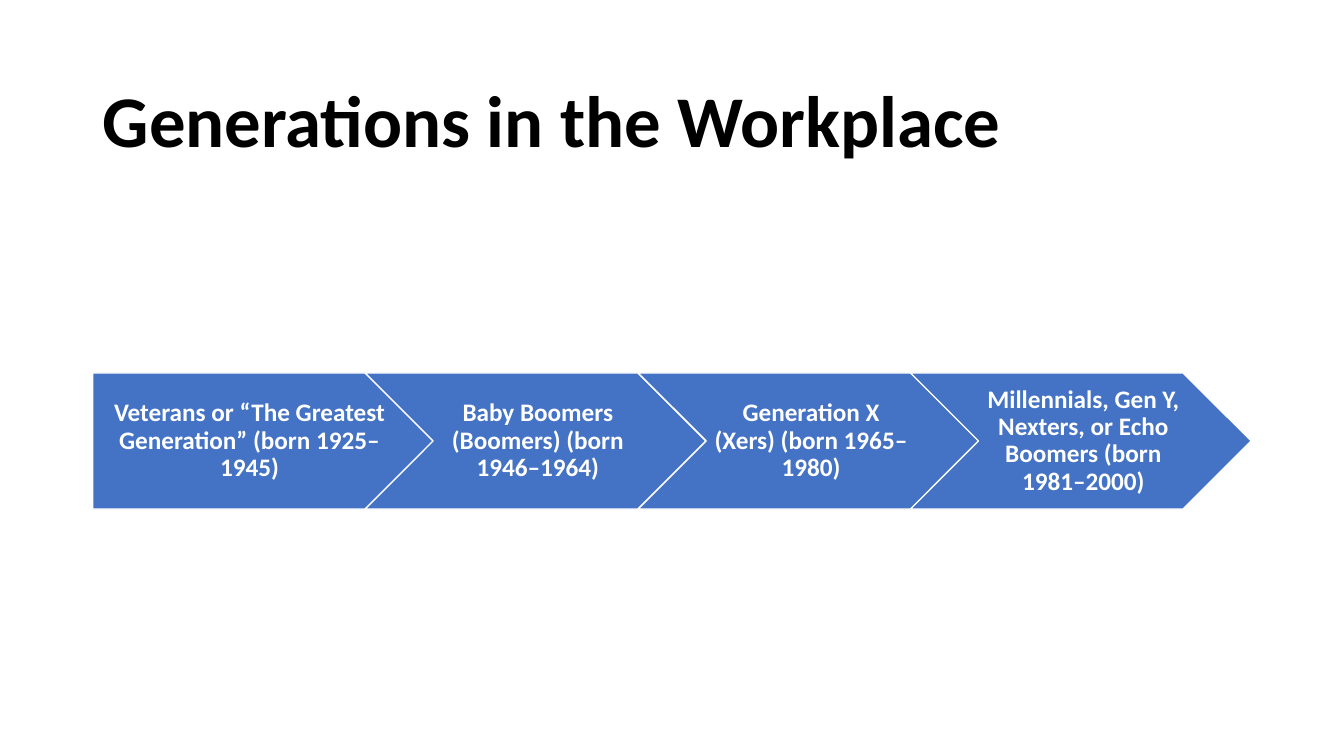
import dataclasses

import pptx
import pptx.dml.color
import pptx.enum.shapes
import pptx.enum.text
import pptx.slide
import pptx.text.text
import pptx.util

PX = 9144  # EMU per px, 100 px to the inch
FONT = "Calibri"
BLACK = pptx.dml.color.RGBColor(0x00, 0x00, 0x00)
WHITE = pptx.dml.color.RGBColor(0xFF, 0xFF, 0xFF)
BLUE = pptx.dml.color.RGBColor(0x44, 0x72, 0xC4)

STRIP_LEFT, STRIP_TOP, STRIP_WIDTH = 92, 370, 1149
ARROW_WIDTH, ARROW_HEIGHT = 338, 135

PENTAGON = pptx.enum.shapes.MSO_SHAPE.PENTAGON
CHEVRON = pptx.enum.shapes.MSO_SHAPE.CHEVRON


@dataclasses.dataclass(frozen=True)
class Generation:
    text: str
    outline: pptx.enum.shapes.MSO_SHAPE = CHEVRON
    left_inset: int = 8


GENERATIONS = [
    Generation("Veterans or “The Greatest Generation” (born 1925–1945)", PENTAGON, 10),
    Generation("Baby Boomers (Boomers) (born 1946–1964)"),
    Generation("Generation X (Xers) (born 1965–1980)"),
    Generation("Millennials, Gen Y, Nexters, or Echo Boomers (born 1981–2000)"),
]


def px(length: int) -> pptx.util.Emu:
    return pptx.util.Emu(length * PX)


def write_text(
    tf: pptx.text.text.TextFrame,
    text: str,
    size: int,
    color: pptx.dml.color.RGBColor,
    align: pptx.enum.text.PP_ALIGN,
) -> None:
    """Fill the frame with one bold, vertically centred paragraph."""
    tf.word_wrap = True
    tf.vertical_anchor = pptx.enum.text.MSO_ANCHOR.MIDDLE
    p = tf.paragraphs[0]
    p.alignment = align
    p.line_spacing = 0.9
    r = p.add_run()
    r.text = text
    r.font.name = FONT
    r.font.size = pptx.util.Pt(size)
    r.font.bold = True
    r.font.color.rgb = color


def add_title(s: pptx.slide.Slide, text: str) -> None:
    sp = s.shapes.add_textbox(px(92), px(61), px(1150), px(124))
    write_text(sp.text_frame, text, 52, BLACK, pptx.enum.text.PP_ALIGN.LEFT)


def add_arrow(s: pptx.slide.Slide, generation: Generation, left: int) -> None:
    sp = s.shapes.add_shape(
        generation.outline, px(left), px(STRIP_TOP), px(ARROW_WIDTH), px(ARROW_HEIGHT)
    )
    sp.shadow.inherit = False
    sp.fill.solid()
    sp.fill.fore_color.rgb = BLUE
    sp.line.color.rgb = WHITE
    sp.line.width = pptx.util.Pt(1)
    tf = sp.text_frame
    tf.margin_left, tf.margin_right = px(generation.left_inset), px(3)
    tf.margin_top = tf.margin_bottom = px(5)
    write_text(tf, generation.text, 18, WHITE, pptx.enum.text.PP_ALIGN.CENTER)


def main() -> None:
    prs = pptx.Presentation()
    prs.slide_width, prs.slide_height = px(1333), px(750)
    s = prs.slides.add_slide(prs.slide_layouts[6])
    add_title(s, "Generations in the Workplace")
    travel = STRIP_WIDTH - ARROW_WIDTH
    for i, generation in enumerate(GENERATIONS):
        add_arrow(s, generation, STRIP_LEFT + round(travel * i / (len(GENERATIONS) - 1)))
    prs.save("out.pptx")


if __name__ == "__main__":
    main()
